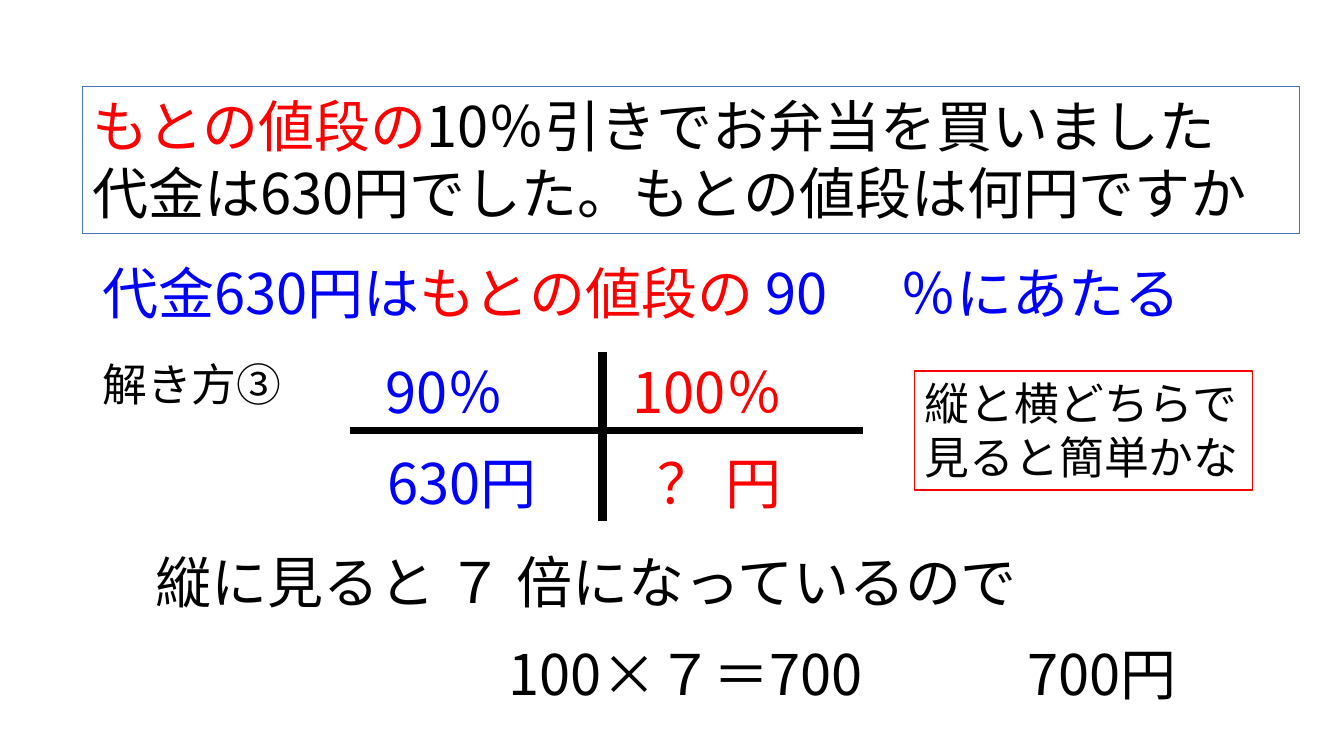
from dataclasses import dataclass
from typing import Optional

from lxml import etree
from pptx import Presentation
from pptx.dml.color import RGBColor
from pptx.enum.shapes import MSO_CONNECTOR, MSO_SHAPE
from pptx.enum.text import MSO_ANCHOR, MSO_AUTO_SIZE, PP_ALIGN
from pptx.oxml.ns import qn
from pptx.util import Pt

RECTANGLE = MSO_SHAPE.RECTANGLE
STRAIGHT = MSO_CONNECTOR.STRAIGHT
TOP = MSO_ANCHOR.TOP
GROW = MSO_AUTO_SIZE.SHAPE_TO_FIT_TEXT
LEFT = PP_ALIGN.LEFT

FONT = "Noto Sans CJK JP"
BLACK, RED, BLUE, BORDER_BLUE = "000000", "FF0000", "0000FF", "4472C4"
LARGE, SMALL = 40, 32
ROW_HEIGHT = 55.5
PERCENT_TOP, YEN_TOP = 251.5, 317


@dataclass
class Piece:
    text: str
    color: str = BLACK


@dataclass
class Passage:
    left: float
    top: float
    width: float
    height: float
    paragraphs: list[list[Piece]]
    size: float = LARGE
    border: Optional[str] = None
    tab: Optional[float] = None


@dataclass
class Rule:
    start: tuple[float, float]
    end: tuple[float, float]
    weight: float


PASSAGES = [
    # Problem statement
    Passage(59, 62, 869, 104.5, [
        [Piece("もとの値段の", RED), Piece("10％引きでお弁当を買いました")],
        [Piece("代金は630円でした。もとの値段は何円ですか")],
    ], border=BORDER_BLUE),
    # Restated relation
    Passage(66, 181, 808, ROW_HEIGHT, [[
        Piece("代金630円は", BLUE), Piece("もとの値段の ", RED),
        Piece("90\t％にあたる", BLUE),
    ]], tab=570),
    Passage(66, 251.5, 150, 46, [[Piece("解き方③")]], size=SMALL),
    # Four cells of the proportion cross
    Passage(268, PERCENT_TOP, 132.5, ROW_HEIGHT, [[Piece("90％", BLUE)]]),
    Passage(269.5, YEN_TOP, 151, ROW_HEIGHT, [[Piece("630円", BLUE)]]),
    Passage(445, PERCENT_TOP, 151, ROW_HEIGHT, [[Piece("100％", RED)]]),
    Passage(462.5, YEN_TOP, 117, ROW_HEIGHT, [[Piece("？ 円", RED)]]),
    # Reasoning and answer
    Passage(104, 387.5, 656, ROW_HEIGHT, [[Piece("縦に見ると ７ 倍になっているので")]]),
    Passage(356, 453, 520.5, ROW_HEIGHT, [[Piece("100×７＝700\t700円")]], tab=371),
    # Hint
    Passage(653.5, 265, 241, 85, [[Piece("縦と横どちらで見ると簡単かな")]],
            size=SMALL, border=RED),
]

CROSS = [
    Rule((250, 307.5), (616.5, 307.5), 4.5),
    Rule((430.5, 251.5), (430.5, 372), 6),
]


def rgb(color: str) -> RGBColor:
    return RGBColor.from_string(color)


def write(paragraph, text: str, *, size: float, color: str) -> None:
    run = paragraph.add_run()
    run.text = text
    run.font.size = Pt(size)
    run.font.name = FONT
    run.font.color.rgb = rgb(color)
    etree.SubElement(run.font._element, qn("a:ea"), typeface=FONT)


def set_tab(paragraph, position: float) -> None:
    properties = paragraph._p.get_or_add_pPr()
    stops = etree.SubElement(properties, qn("a:tabLst"))
    etree.SubElement(stops, qn("a:tab"), pos=str(Pt(position)), algn="l")


def draw_passage(slide, passage: Passage) -> None:
    box = [Pt(v) for v in (passage.left, passage.top, passage.width, passage.height)]
    if passage.border:
        holder = slide.shapes.add_shape(RECTANGLE, *box)
        holder.shadow.inherit = False
        holder.fill.background()
        holder.line.color.rgb = rgb(passage.border)
        holder.line.width = Pt(0.75)
    else:
        holder = slide.shapes.add_textbox(*box)
    frame = holder.text_frame
    frame.word_wrap = True
    frame.auto_size = GROW
    frame.vertical_anchor = TOP
    for index, pieces in enumerate(passage.paragraphs):
        paragraph = frame.add_paragraph() if index else frame.paragraphs[0]
        paragraph.alignment = LEFT
        if passage.tab:
            set_tab(paragraph, passage.tab)
        for piece in pieces:
            write(paragraph, piece.text, size=passage.size, color=piece.color)


def draw_rule(slide, rule: Rule) -> None:
    ends = [Pt(v) for v in (*rule.start, *rule.end)]
    connector = slide.shapes.add_connector(STRAIGHT, *ends)
    connector.line.color.rgb = rgb(BLACK)
    connector.line.width = Pt(rule.weight)
    etree.SubElement(connector._element.spPr, qn("a:effectLst"))


def main() -> None:
    presentation = Presentation()
    presentation.slide_width = Pt(960)
    presentation.slide_height = Pt(540)
    slide = presentation.slides.add_slide(presentation.slide_layouts[6])
    for rule in CROSS:
        draw_rule(slide, rule)
    for passage in PASSAGES:
        draw_passage(slide, passage)
    presentation.save("out.pptx")


if __name__ == "__main__":
    main()
